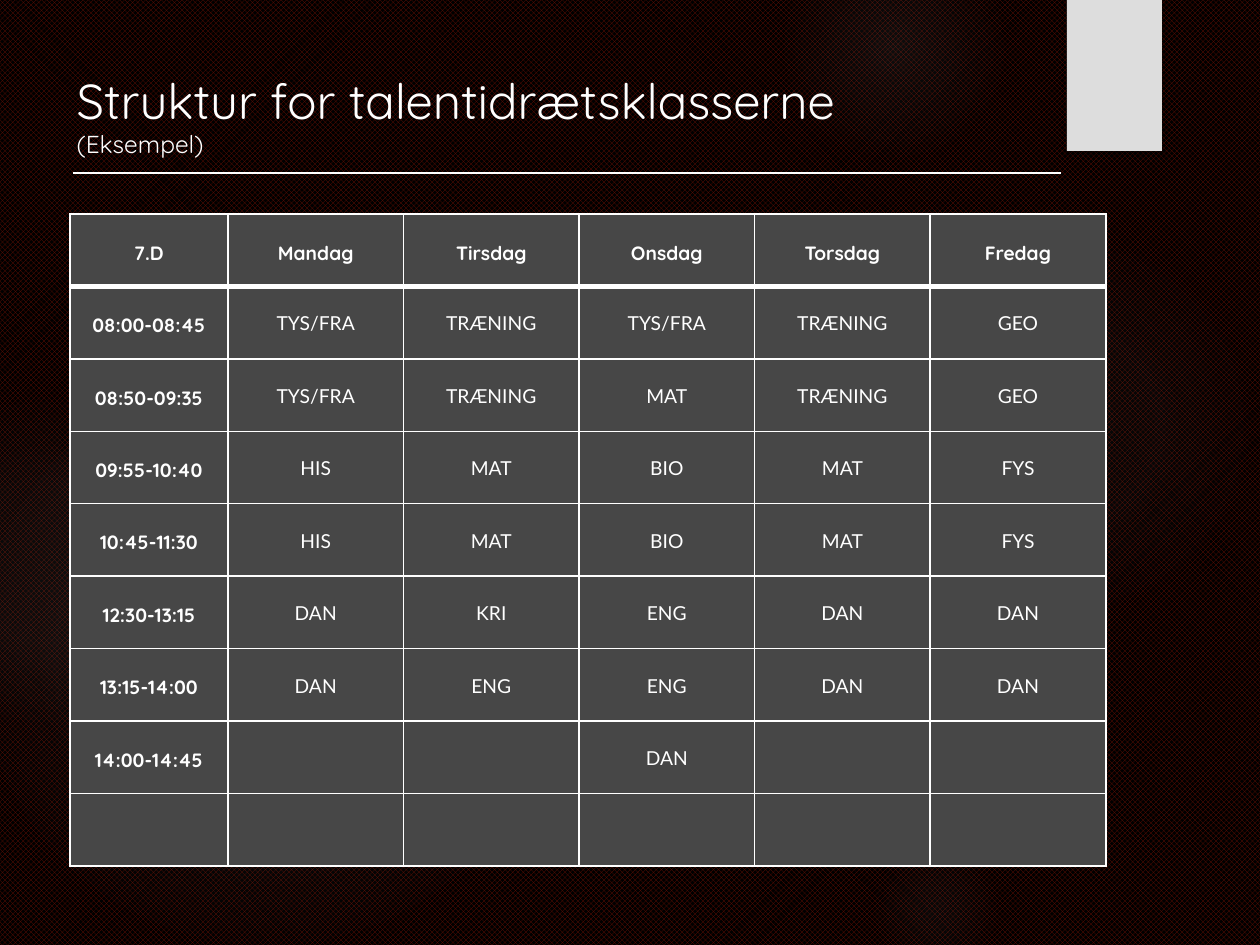
"""Build the weekly timetable slide for the sports talent classes."""
from dataclasses import dataclass

from lxml import etree
from pptx import Presentation
from pptx import util as u
from pptx.dml.color import RGBColor
from pptx.enum import dml, shapes, text
from pptx.oxml import ns

COLORS = {
    "weave": "6C1004",
    "back": "000000",
    "glow": "666666",
    "tab": "DDDDDD",
    "white": "FFFFFF",
    "cell": "474747",
}
HEADING_FONT, BODY_FONT = "Quicksand", "Lato"
NAMESPACE = "http://schemas.openxmlformats.org/drawingml/2006/main"


@dataclass
class Box:
    left: int
    top: int
    width: int
    height: int


@dataclass
class Glow:
    box: Box
    stops: list[tuple[int, int]]


@dataclass
class Style:
    font: str
    size: int
    bold: bool = False


GLOWS = [
    Glow(Box(868, 231, 388, 388), [(0, 7), (36, 6), (69, 0)]),
    Glow(Box(784, -63, 220, 220), [(0, 14), (36, 7), (73, 0)]),
    Glow(Box(868, 840, 136, 136), [(0, 9), (36, 5), (66, 0)]),
    Glow(Box(-21, 368, 577, 577), [(0, 11), (36, 10), (75, 0)]),
    Glow(Box(-116, 399, 325, 325), [(0, 8), (36, 8), (72, 0)]),
]
TIMETABLE = [
    ["7.D", "Mandag", "Tirsdag", "Onsdag", "Torsdag", "Fredag"],
    ["08:00-08:45", "TYS/FRA", "TRÆNING", "TYS/FRA", "TRÆNING", "GEO"],
    ["08:50-09:35", "TYS/FRA", "TRÆNING", "MAT", "TRÆNING", "GEO"],
    ["09:55-10:40", "HIS", "MAT", "BIO", "MAT", "FYS"],
    ["10:45-11:30", "HIS", "MAT", "BIO", "MAT", "FYS"],
    ["12:30-13:15", "DAN", "KRI", "ENG", "DAN", "DAN"],
    ["13:15-14:00", "DAN", "ENG", "ENG", "DAN", "DAN"],
    ["14:00-14:45", "", "", "DAN", "", ""],
    ["", "", "", "", "", ""],
]


def px(length: int) -> u.Emu:
    return u.Emu(round(length * 914400 / 126))


def place(box: Box) -> tuple[u.Emu, ...]:
    return px(box.left), px(box.top), px(box.width), px(box.height)


def color(name: str) -> RGBColor:
    return RGBColor.from_string(COLORS[name])


def element(xml: str):
    return etree.fromstring(xml.replace(" ", f' xmlns:a="{NAMESPACE}" ', 1))


def add_run(paragraph, words: str, style: Style) -> None:
    run = paragraph.add_run()
    run.text = words
    run.font.name = style.font
    run.font.size = u.Pt(style.size)
    run.font.bold = style.bold
    run.font.color.rgb = color("white")


def paint_background(slide) -> None:
    fill = slide.background.fill
    fill.patterned()
    fill.pattern = dml.MSO_PATTERN.TRELLIS
    fill.fore_color.rgb = color("weave")
    fill.back_color.rgb = color("back")


def add_glow(slide, glow: Glow) -> None:
    shape = slide.shapes.add_shape(shapes.MSO_SHAPE.OVAL, *place(glow.box))
    shape.shadow.inherit = False
    shape.line.fill.background()
    shape.fill.background()
    stops = "".join(
        f'<a:gs pos="{position * 1000}"><a:srgbClr val="{COLORS["glow"]}">'
        f'<a:alpha val="{alpha * 1000}"/></a:srgbClr></a:gs>'
        for position, alpha in glow.stops
    )
    gradient = element(
        f'<a:gradFill rotWithShape="1"><a:gsLst>{stops}</a:gsLst><a:path path="circle">'
        '<a:fillToRect l="50000" t="50000" r="50000" b="50000"/></a:path></a:gradFill>'
    )
    properties = shape.element.spPr
    properties.replace(properties.find(ns.qn("a:noFill")), gradient)


def add_corner_tab(slide, box: Box) -> None:
    shape = slide.shapes.add_shape(shapes.MSO_SHAPE.RECTANGLE, *place(box))
    shape.fill.solid()
    shape.fill.fore_color.rgb = color("tab")
    shape.line.fill.background()
    shape.shadow.inherit = False
    shape.element.spPr.find(ns.qn("a:effectLst")).append(element(
        f'<a:outerShdw blurRad="{u.Pt(3)}" dist="{u.Pt(2)}" dir="5400000" rotWithShape="0">'
        f'<a:srgbClr val="{COLORS["back"]}"><a:alpha val="45000"/></a:srgbClr></a:outerShdw>'
    ))


def add_rule(slide, left: int, right: int, top: int) -> None:
    line = slide.shapes.add_connector(
        shapes.MSO_CONNECTOR.STRAIGHT, px(left), px(top), px(right), px(top))
    line.line.color.rgb = color("white")
    line.line.width = u.Pt(0.75)
    etree.SubElement(line.element.spPr, ns.qn("a:effectLst"))


def fill_title(slide, box: Box) -> None:
    title = slide.shapes.title
    title.left, title.top, title.width, title.height = place(box)
    frame = title.text_frame
    frame.auto_size = text.MSO_AUTO_SIZE.NONE
    frame.vertical_anchor = text.MSO_ANCHOR.TOP
    add_run(frame.paragraphs[0], "Struktur for talentidrætsklasserne", Style(HEADING_FONT, 28))
    add_run(frame.add_paragraph(), "(Eksempel)", Style(HEADING_FONT, 14))
    for paragraph in frame.paragraphs:
        paragraph.alignment = text.PP_ALIGN.LEFT


def add_borders(cell, top: int, bottom: int) -> None:
    properties = cell._tc.get_or_add_tcPr()
    for side, points in (("L", 1), ("R", 1), ("T", top), ("B", bottom)):
        properties.append(element(
            f'<a:ln{side} w="{u.Pt(points)}"><a:solidFill><a:srgbClr val="{COLORS["white"]}"/>'
            f'</a:solidFill></a:ln{side}>'
        ))


def fill_cell(cell, words: str, row: int, column: int) -> None:
    add_borders(cell, top=3 if row == 1 else 1, bottom=3 if row == 0 else 1)
    cell.fill.solid()
    cell.fill.fore_color.rgb = color("cell")
    cell.vertical_anchor = text.MSO_ANCHOR.MIDDLE
    cell.margin_left = cell.margin_right = px(9)
    cell.margin_top = px(4 if row == 0 or column == 0 else 0)
    cell.margin_bottom = 0
    if words:
        heading = row == 0 or column == 0
        paragraph = cell.text_frame.paragraphs[0]
        paragraph.alignment = text.PP_ALIGN.CENTER
        paragraph.line_spacing = 1.07
        add_run(paragraph, words, Style(HEADING_FONT if heading else BODY_FONT, 11, heading))


def add_timetable(slide, box: Box, time_width: int) -> None:
    day_count = len(TIMETABLE[0]) - 1
    table = slide.shapes.add_table(len(TIMETABLE), day_count + 1, *place(box)).table
    table.first_row = table.horz_banding = False
    for index, column in enumerate(table.columns):
        column.width = px(box.width - time_width) // day_count if index else px(time_width)
    for row, entries in enumerate(TIMETABLE):
        for column, words in enumerate(entries):
            fill_cell(table.cell(row, column), words, row, column)


def main() -> None:
    presentation = Presentation()
    presentation.slide_width, presentation.slide_height = px(1260), px(945)
    slide = presentation.slides.add_slide(presentation.slide_layouts[5])
    paint_background(slide)
    for glow in GLOWS:
        add_glow(slide, glow)
    add_corner_tab(slide, Box(1067, 0, 95, 151))
    add_rule(slide, 73, 1061, 173)
    fill_title(slide, Box(64, 64, 871, 226))
    add_timetable(slide, Box(70, 214, 1036, 652), time_width=158)
    presentation.save("out.pptx")


if __name__ == "__main__":
    main()
